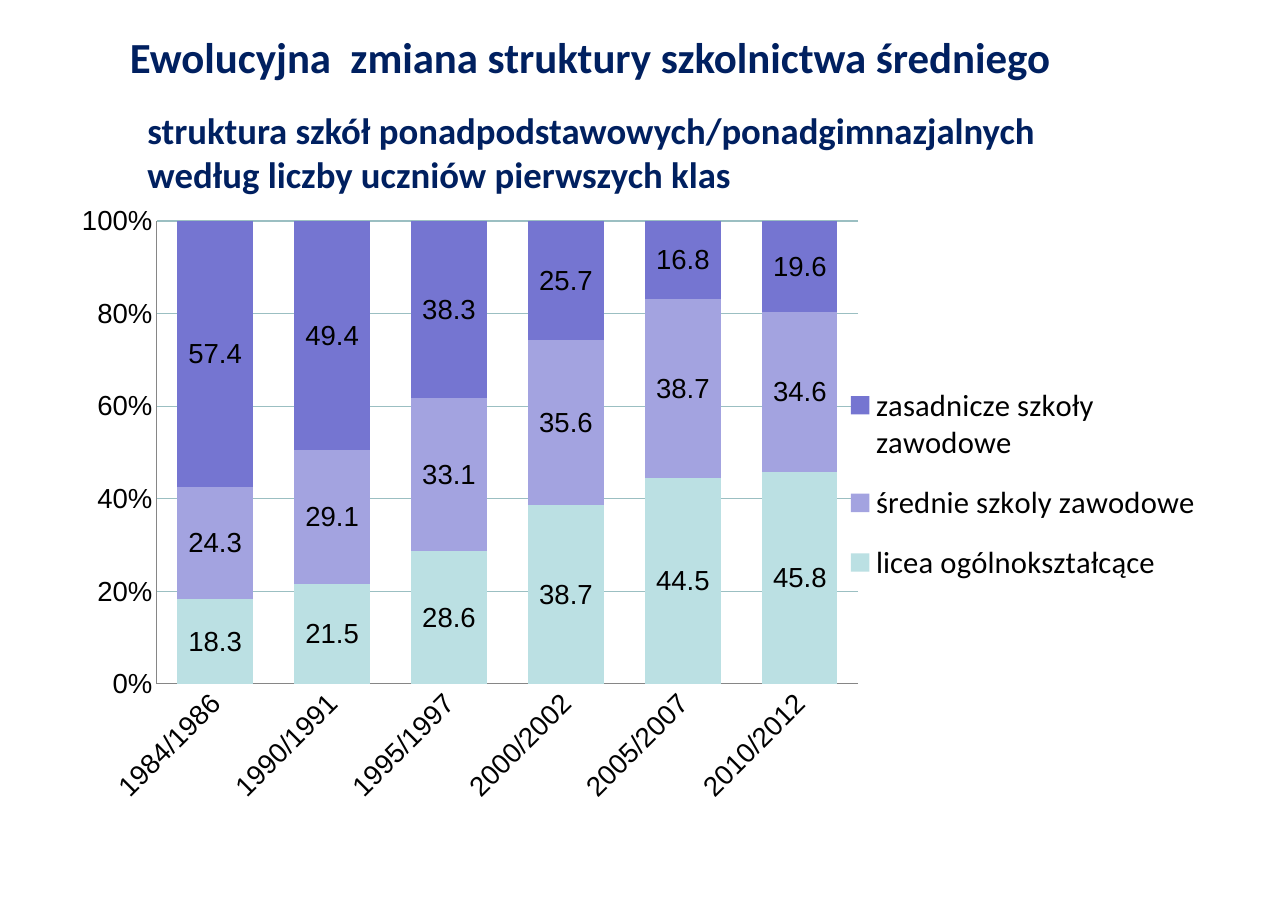
from lxml import etree
from pptx import Presentation
from pptx.chart.data import CategoryChartData
from pptx.dml.color import RGBColor
from pptx.enum import chart as kinds, shapes
from pptx.oxml import ns
from pptx.util import Pt

# Content
TITLE = "Ewolucyjna  zmiana struktury szkolnictwa średniego"
LEAD = ("struktura szkół ponadpodstawowych/ponadgimnazjalnych "
        "według liczby uczniów pierwszych klas")
YEARS = ["1984/1986", "1990/1991", "1995/1997",
         "2000/2002", "2005/2007", "2010/2012"]
SCHOOLS = {
    "licea ogólnokształcące": (18.3, 21.5, 28.6, 38.7, 44.5, 45.8),
    "średnie szkoly zawodowe": (24.3, 29.1, 33.1, 35.6, 38.7, 34.6),
    "zasadnicze szkoły zawodowe": (57.4, 49.4, 38.3, 25.7, 16.8, 19.6),
}

THEME = {
    "head": "Calibri", "body": "Arial",
    "title": 28, "lead": 24, "key": 20, "chart": 18,
    "navy": "002060", "black": "000000", "white": "FFFFFF",
    "grid": "9BBFC2", "axis": "868686",
    "bars": ("BBE0E3", "A3A3E0", "7575D1"),
}

# Places in points: left, top, width, height
WIDE, HIGH = 841.7, 595.4
PANEL = (0, 0, WIDE, 534.2)
TITLE_BOX = (77.8, 16.6, 652.3, 41)
LEAD_BOX = (89.3, 67, 646.6, 65.5)
CHART_BOX = (27.4, 128.9, 765.4, 421.9)

# Places in points inside the chart
PLOT = (75, 15.6, 458.5, 302.5)
KEY = (531.4, 109.3, 229.6, 156.2)


def color(name):
    return RGBColor.from_string(THEME.get(name, name))


def style(font, face, size, tint):
    font.name, font.size = THEME[face], Pt(THEME[size])
    font.color.rgb = color(tint)


def spot(box):
    return [Pt(n) for n in box]


def write(slide, box, words, size):
    frame = slide.shapes.add_textbox(*spot(box)).text_frame
    frame.word_wrap = True
    para = frame.paragraphs[0]
    para.text = words
    style(para.font, "head", size, "navy")
    para.font.bold = True


def layout(box, inner=False):
    node = etree.Element(ns.qn("c:layout"))
    hand = etree.SubElement(node, ns.qn("c:manualLayout"))
    wide, high = CHART_BOX[2:]
    parts = [n / full for n, full in zip(box, (wide, high) * 2)]
    rows = [("layoutTarget", "inner")] if inner else []
    rows += [("xMode", "edge"), ("yMode", "edge")]
    rows += zip("xywh", parts)
    for tag, val in rows:
        etree.SubElement(hand, ns.qn("c:" + tag)).set("val", str(val))
    return node


def rule(line, tint):
    line.color.rgb = color(tint)
    line.width = Pt(0.75)


def draw(slide):
    data = CategoryChartData(number_format="0.0")
    data.categories = YEARS
    for name, vals in SCHOOLS.items():
        data.add_series(name, vals)
    chart = slide.shapes.add_chart(
        kinds.XL_CHART_TYPE.COLUMN_STACKED_100, *spot(CHART_BOX), data).chart
    chart.has_title = False
    style(chart.font, "body", "chart", "black")

    # Bars and their values
    plot = chart.plots[0]
    plot.gap_width, plot.overlap = 55, 100
    plot.vary_by_categories = False
    for bar, tint in zip(plot.series, THEME["bars"]):
        bar.format.fill.solid()
        bar.format.fill.fore_color.rgb = color(tint)
        tags = bar.data_labels
        tags.show_value = True
        tags.number_format, tags.number_format_is_linked = "0.0", False
        style(tags.font, "body", "chart", "black")

    # Axes
    years, share = chart.category_axis, chart.value_axis
    for axis in (years, share):
        axis.major_tick_mark = kinds.XL_TICK_MARK.NONE
        axis.minor_tick_mark = kinds.XL_TICK_MARK.NONE
        rule(axis.format.line, "axis")
        style(axis.tick_labels.font, "body", "chart", "black")
    share.major_unit = 0.2
    share.has_major_gridlines = True
    rule(share.major_gridlines.format.line, "grid")
    share.tick_labels.number_format = "0%"
    share.tick_labels.number_format_is_linked = False
    years._element.find(".//" + ns.qn("a:bodyPr")).set("rot", "-2700000")

    # Legend
    chart.has_legend = True
    key = chart.legend
    key.position = kinds.XL_LEGEND_POSITION.RIGHT
    key.include_in_layout = False
    style(key.font, "head", "key", "black")

    # Fixed places of plot and legend
    area = chart._chartSpace.find(".//" + ns.qn("c:plotArea"))
    for part in (area, key._element):
        for old in part.findall(ns.qn("c:layout")):
            part.remove(old)
    area.insert(0, layout(PLOT, True))
    key._element.find(ns.qn("c:legendPos")).addnext(layout(KEY))


def main():
    deck = Presentation()
    deck.slide_width, deck.slide_height = Pt(WIDE), Pt(HIGH)
    slide = deck.slides.add_slide(deck.slide_layouts[6])

    # White panel
    panel = slide.shapes.add_shape(
        shapes.MSO_SHAPE.RECTANGLE, *spot(PANEL))
    panel.shadow.inherit = False
    panel.fill.solid()
    panel.fill.fore_color.rgb = color("white")
    panel.line.fill.background()

    draw(slide)
    write(slide, TITLE_BOX, TITLE, "title")
    write(slide, LEAD_BOX, LEAD, "lead")
    deck.save("out.pptx")


if __name__ == "__main__":
    main()
